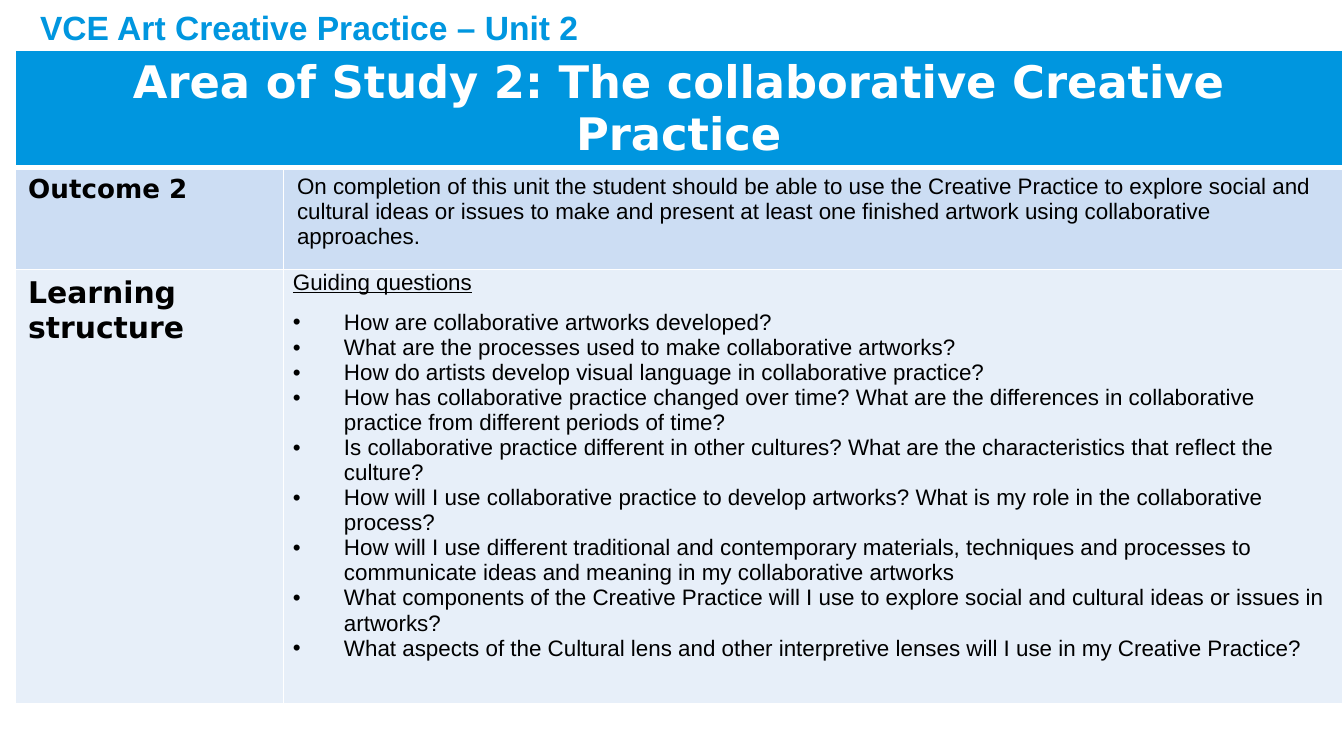
from lxml.etree import SubElement
from pptx import Presentation
from pptx.dml.color import RGBColor
from pptx.enum.text import MSO_ANCHOR, PP_ALIGN
from pptx.oxml.ns import qn
from pptx.util import Emu, Inches, Pt

UNIT_TITLE = "VCE Art Creative Practice – Unit 2"
AREA_OF_STUDY = "Area of Study 2: The collaborative Creative Practice"
OUTCOME_LABEL = "Outcome 2"
OUTCOME = (
    "On completion of this unit the student should be able to use the Creative Practice "
    "to explore social and cultural ideas or issues to make and present at least one "
    "finished artwork using collaborative approaches."
)
LEARNING_LABEL = "Learning structure"
QUESTIONS_HEADING = "Guiding questions"
QUESTIONS = [
    "How are collaborative artworks developed?",
    "What are the processes used to make collaborative artworks?",
    "How do artists develop visual language in collaborative practice?",
    "How has collaborative practice changed over time? What are the differences in "
    "collaborative practice from different periods of time?",
    "Is collaborative practice different in other cultures? What are the characteristics "
    "that reflect the culture?",
    "How will I use collaborative practice to develop artworks? What is my role in the "
    "collaborative process?",
    "How will I use different traditional and contemporary materials, techniques and "
    "processes to communicate ideas and meaning in my collaborative artworks",
    "What components of the Creative Practice will I use to explore social and cultural "
    "ideas or issues in artworks?",
    "What aspects of the Cultural lens and other interpretive lenses will I use in my "
    "Creative Practice?",
]

THEME = {
    "blue": "0096DF", "white": "FFFFFF", "black": "000000",
    "outcome_fill": "CCDDF3", "learning_fill": "E7EFF9",
    "heading_font": "DejaVu Sans", "body_font": "Arial",
    "area_size": 24, "unit_size": 18, "learning_size": 16, "outcome_size": 14, "body_size": 12,
    "rule": 1, "header_rule": 3, "gap": 4,
}
SLIDE_WIDTH = 10
SLIDE_HEIGHT = SLIDE_WIDTH * 9 / 16
TABLE_LEFT, TABLE_TOP = 0.11, 0.37
COLUMNS = [2, 7.88]
ROWS = [0.65, 0.76, 3.23]
BULLET_INDENT, BULLET_TAB = 0.38, 0.12


def colour(name):
    return RGBColor.from_string(THEME[name])


def write(paragraph, text, size, font="body_font", bold=False, ink="black"):
    paragraph.text = text
    style = paragraph.font
    style.name, style.size, style.bold = THEME[font], Pt(THEME[size]), bold
    style.color.rgb = colour(ink)


def make_bullet(paragraph):
    properties = paragraph._p.get_or_add_pPr()
    indent = Inches(BULLET_INDENT)
    properties.set("marL", str(indent))
    properties.set("indent", str(-indent))
    SubElement(properties, qn("a:buFont"), typeface="Arial")
    SubElement(properties, qn("a:buChar"), char="•")
    tabs = SubElement(properties, qn("a:tabLst"))
    SubElement(tabs, qn("a:tab"), pos=str(Inches(BULLET_TAB)), algn="l")


def style_cell(cell, fill, bottom_rule="rule"):
    """Rule all four sides in white, then fill: the schema wants that order."""
    properties = cell._tc.get_or_add_tcPr()
    for side in "LRTB":
        width = Pt(THEME[bottom_rule if side == "B" else "rule"])
        line = SubElement(properties, qn(f"a:ln{side}"), w=str(width))
        SubElement(SubElement(line, qn("a:solidFill")), qn("a:srgbClr"), val=THEME["white"])
    cell.fill.solid()
    cell.fill.fore_color.rgb = colour(fill)


presentation = Presentation()
presentation.slide_width, presentation.slide_height = Inches(SLIDE_WIDTH), Inches(SLIDE_HEIGHT)
slide = presentation.slides.add_slide(presentation.slide_layouts[6])

study_plan = slide.shapes.add_table(
    len(ROWS), len(COLUMNS), Inches(TABLE_LEFT), Inches(TABLE_TOP),
    Inches(sum(COLUMNS)), Inches(sum(ROWS)),
).table
for column, width in zip(study_plan.columns, COLUMNS):
    column.width = Inches(width)
for row, height in zip(study_plan.rows, ROWS):
    row.height = Inches(height)

for row, fill, bottom_rule in zip(
    study_plan.rows,
    ("blue", "outcome_fill", "learning_fill"),
    ("header_rule", "rule", "rule"),
):
    for cell in row.cells:
        style_cell(cell, fill, bottom_rule)

header = study_plan.cell(0, 0)
header.merge(study_plan.cell(0, 1))
header.vertical_anchor = MSO_ANCHOR.MIDDLE
area = header.text_frame.paragraphs[0]
area.alignment = PP_ALIGN.CENTER
write(area, AREA_OF_STUDY, "area_size", "heading_font", True, "white")

for row_number, label, size in (
    (1, OUTCOME_LABEL, "outcome_size"),
    (2, LEARNING_LABEL, "learning_size"),
):
    label_paragraph = study_plan.cell(row_number, 0).text_frame.paragraphs[0]
    write(label_paragraph, label, size, "heading_font", True)

write(study_plan.cell(1, 1).text_frame.paragraphs[0], OUTCOME, "body_size")

questions_cell = study_plan.cell(2, 1)
questions_cell.margin_left = questions_cell.margin_right = Inches(0.07)
questions_cell.margin_top = questions_cell.margin_bottom = Emu(0)
questions_frame = questions_cell.text_frame
heading = questions_frame.paragraphs[0]
write(heading, QUESTIONS_HEADING, "body_size")
heading.font.underline = True
heading.space_after = Pt(THEME["gap"])
for number, question in enumerate(QUESTIONS):
    item = questions_frame.add_paragraph()
    if number == 0:
        item.space_before = Pt(THEME["gap"])
    if number == len(QUESTIONS) - 1:
        item.space_after = Pt(THEME["gap"])
    make_bullet(item)
    write(item, question, "body_size")

unit_frame = slide.shapes.add_textbox(
    Inches(0.2), Inches(0), Inches(7.59), Inches(0.4)
).text_frame
unit_frame.word_wrap = True
write(unit_frame.paragraphs[0], UNIT_TITLE, "unit_size", bold=True, ink="blue")

presentation.save("out.pptx")
